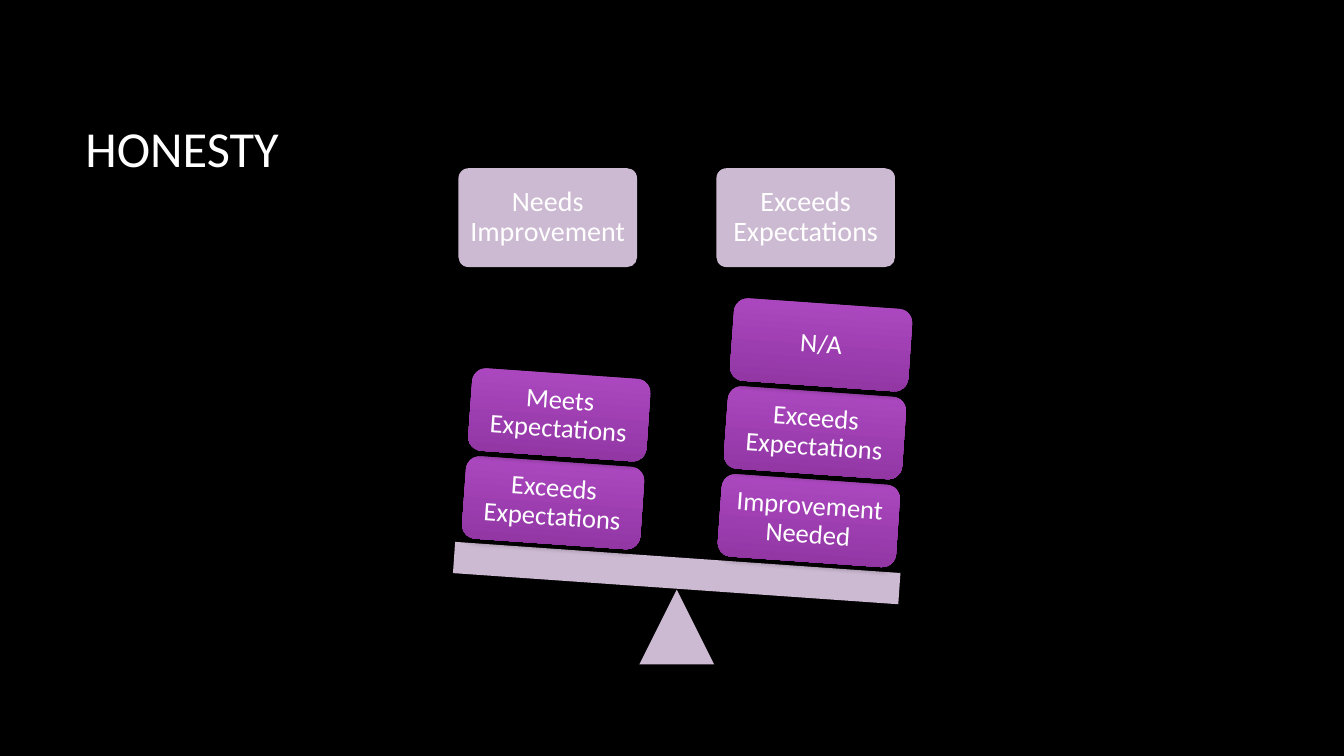
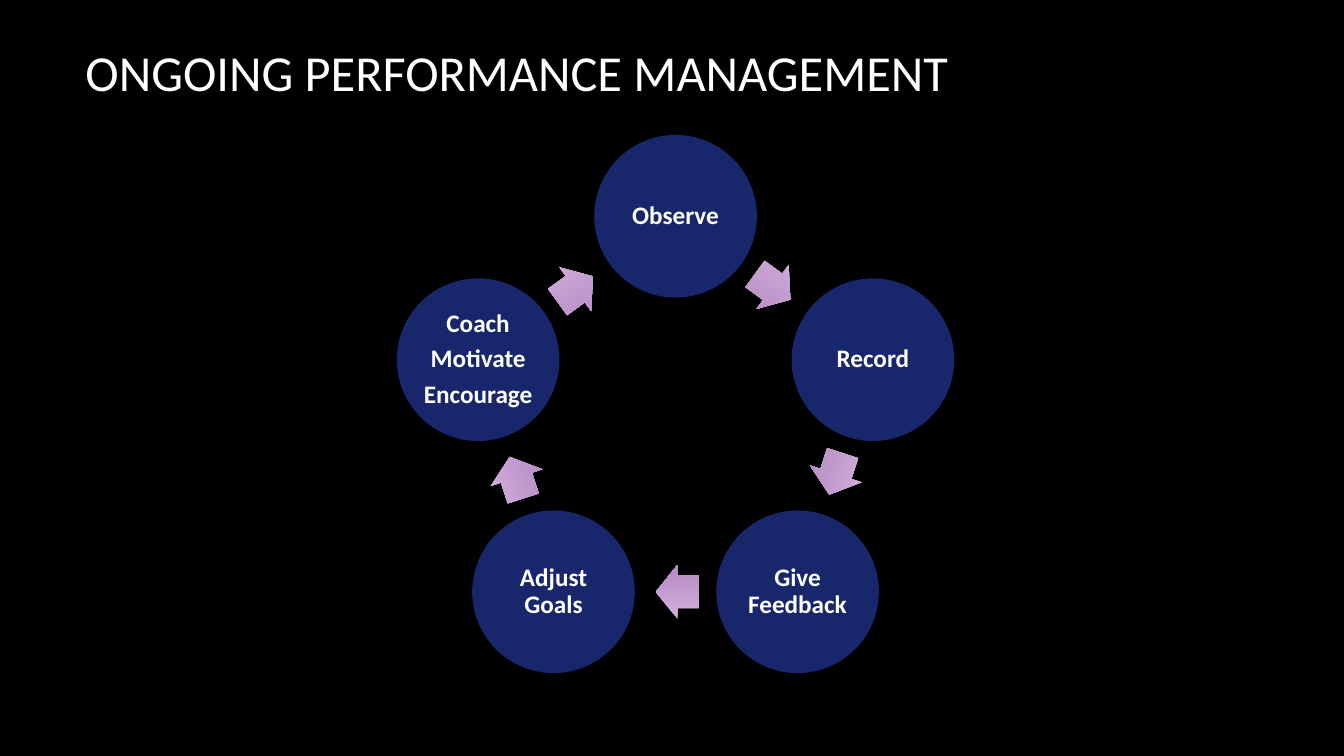
from math import cos, pi, radians, sin

from lxml import etree
from pptx import Presentation
from pptx.dml.color import RGBColor
from pptx.enum import shapes, text
from pptx.oxml import ns
from pptx.util import Cm, Pt

BLACK = RGBColor(0x00, 0x00, 0x00)
WHITE = RGBColor(0xFF, 0xFF, 0xFF)
NAVY = RGBColor(0x18, 0x27, 0x6C)
LILAC = RGBColor(0xE3, 0xCE, 0xE9)
PURPLE = (RGBColor(0xAE, 0x4A, 0xC2), RGBColor(0x8F, 0x34, 0xA1))
MAUVE = (RGBColor(0xD3, 0xB2, 0xDD), RGBColor(0xB4, 0x88, 0xC1))

FONT = "Calibri"
TITLE = {"name": FONT, "size": Pt(36)}
HEAD = {"name": FONT, "size": Pt(20)}
BLOCK = {"name": FONT, "size": Pt(19)}
STEP = {"name": FONT, "size": Pt(18), "bold": True}
KIND = shapes.MSO_SHAPE
TILT = 4


def style(font, form):
    for key, value in form.items():
        setattr(font, key, value)
    font.color.rgb = WHITE


def sub(node, tag, **attrs):
    return etree.SubElement(node, ns.qn(tag), attrs)


def fade(shape):
    """Let a solid fill show at 90 % opacity."""
    for color in shape._element.spPr.iter(ns.qn("a:srgbClr")):
        sub(color, "a:alpha", val="90000")


def shade(shape):
    """Cast a soft shadow straight down."""
    effects = shape._element.spPr.find(ns.qn("a:effectLst"))
    cast = sub(effects, "a:outerShdw", blurRad=str(Pt(4)), dist=str(Pt(3)),
               dir="5400000", algn="ctr", rotWithShape="0")
    color = sub(cast, "a:srgbClr", val=str(BLACK))
    sub(color, "a:alpha", val="35000")


def draw(slide, kind, x, y, w, h, color, turn=0):
    """Add a shape centred on x, y; a pair of colours makes a gradient."""
    shape = slide.shapes.add_shape(
        kind, Cm(x - w / 2), Cm(y - h / 2), Cm(w), Cm(h))
    shape.rotation = turn
    shape.shadow.inherit = False
    shape.line.fill.background()
    if isinstance(color, RGBColor):
        shape.fill.solid()
        shape.fill.fore_color.rgb = color
    else:
        shape.fill.gradient()
        shape.fill.gradient_angle = 270
        for stop, tone in zip(shape.fill.gradient_stops, color):
            stop.color.rgb = tone
    return shape


def draw_pale(slide, kind, x, y, w, h, turn=0):
    shape = draw(slide, kind, x, y, w, h, LILAC, turn)
    fade(shape)
    return shape


def write(shape, lines, form, inset):
    frame = shape.text_frame
    frame.word_wrap = True
    frame.vertical_anchor = text.MSO_ANCHOR.MIDDLE
    for side in ("left", "right", "top", "bottom"):
        setattr(frame, "margin_" + side, Cm(inset))
    frame.text = "\n".join(lines)
    for i, para in enumerate(frame.paragraphs):
        para.alignment = text.PP_ALIGN.CENTER
        para.line_spacing = 0.9
        para.space_before = Pt(6 if i else 0)
        style(para.font, form)


def add_slide(deck, words, box):
    slide = deck.slides.add_slide(deck.slide_layouts[5])
    title = slide.shapes.title
    title.left, title.top, title.width, title.height = map(Cm, box)
    frame = title.text_frame
    frame.text = words
    frame.vertical_anchor = text.MSO_ANCHOR.MIDDLE
    frame.auto_size = text.MSO_AUTO_SIZE.NONE
    para = frame.paragraphs[0]
    para.alignment = text.PP_ALIGN.LEFT
    style(para.font, TITLE)
    return slide


def draw_scale(slide, box, sides):
    """Draw a tilted scale; each side is a heading and its blocks, bottom up."""
    left, top, width, height = box
    mid, foot = left + width / 2, top + height
    beam = foot - 2.3
    angle = radians(TILT)
    base = 1.88
    draw_pale(slide, KIND.ISOSCELES_TRIANGLE, mid, foot - base / 2, base, base)
    draw_pale(slide, KIND.RECTANGLE, mid, beam, width, 0.79, TILT)
    for sign, (head, blocks) in zip((-1, 1), sides):
        tall = 2.49
        card = draw_pale(slide, KIND.ROUNDED_RECTANGLE,
                         mid + sign * 3.25, top + tall / 2, 4.5, tall)
        card.adjustments[0] = 0.1
        write(card, [head], HEAD, 0.13)
        for i, words in enumerate(blocks):
            along, up = sign * 3.23, 1.55 + 2.22 * i
            x = mid + along * cos(angle) + up * sin(angle)
            y = beam + along * sin(angle) - up * cos(angle)
            block = draw(slide, KIND.ROUNDED_RECTANGLE, x, y, 4.5, 2.08,
                         PURPLE, TILT)
            shade(block)
            write(block, [words], BLOCK, 0.15)


def draw_cycle(slide, box, steps):
    """Draw steps clockwise from the top, with an arrow after each."""
    left, top, width = box
    size = 4.1
    turn = 2 * pi / len(steps)
    ring = (width - size) / 2 / sin(turn)
    mid, hub = left + width / 2, top + size / 2 + ring
    for i, lines in enumerate(steps):
        angle = i * turn
        disc = draw(slide, KIND.OVAL, mid + ring * sin(angle),
                    hub - ring * cos(angle), size, size, NAVY)
        write(disc, lines, STEP, 0.08)
        half = angle + turn / 2
        reach, back = ring * cos(turn / 2), 0.05
        arrow = draw(slide, KIND.RIGHT_ARROW,
                     mid + reach * sin(half) - back * cos(half),
                     hub - reach * cos(half) - back * sin(half),
                     1.1, 1.37, MAUVE, 360 / len(steps) * (i + 0.5))
        arrow.adjustments[0] = 0.6


def main():
    deck = Presentation()
    deck.slide_width, deck.slide_height = Cm(33.87), Cm(19.05)
    back = deck.slide_master.background.fill
    back.solid()
    back.fore_color.rgb = BLACK

    slide = add_slide(deck, "HONESTY", (1.9, 1.7, 28.15, 4.04))
    draw_scale(slide, (11.43, 4.24, 11.25, 12.5), [
        ("Needs Improvement", ["Exceeds Expectations", "Meets Expectations"]),
        ("Exceeds Expectations",
         ["Improvement Needed", "Exceeds Expectations", "N/A"]),
    ])

    slide = add_slide(deck, "ONGOING PERFORMANCE MANAGEMENT",
                      (1.9, 0.64, 28.88, 2.34))
    draw_cycle(slide, (10, 3.4, 14.05), [
        ["Observe"], ["Record"], ["Give Feedback"], ["Adjust Goals"],
        ["Coach", "Motivate", "Encourage"],
    ])
    deck.save("out.pptx")


if __name__ == "__main__":
    main()
